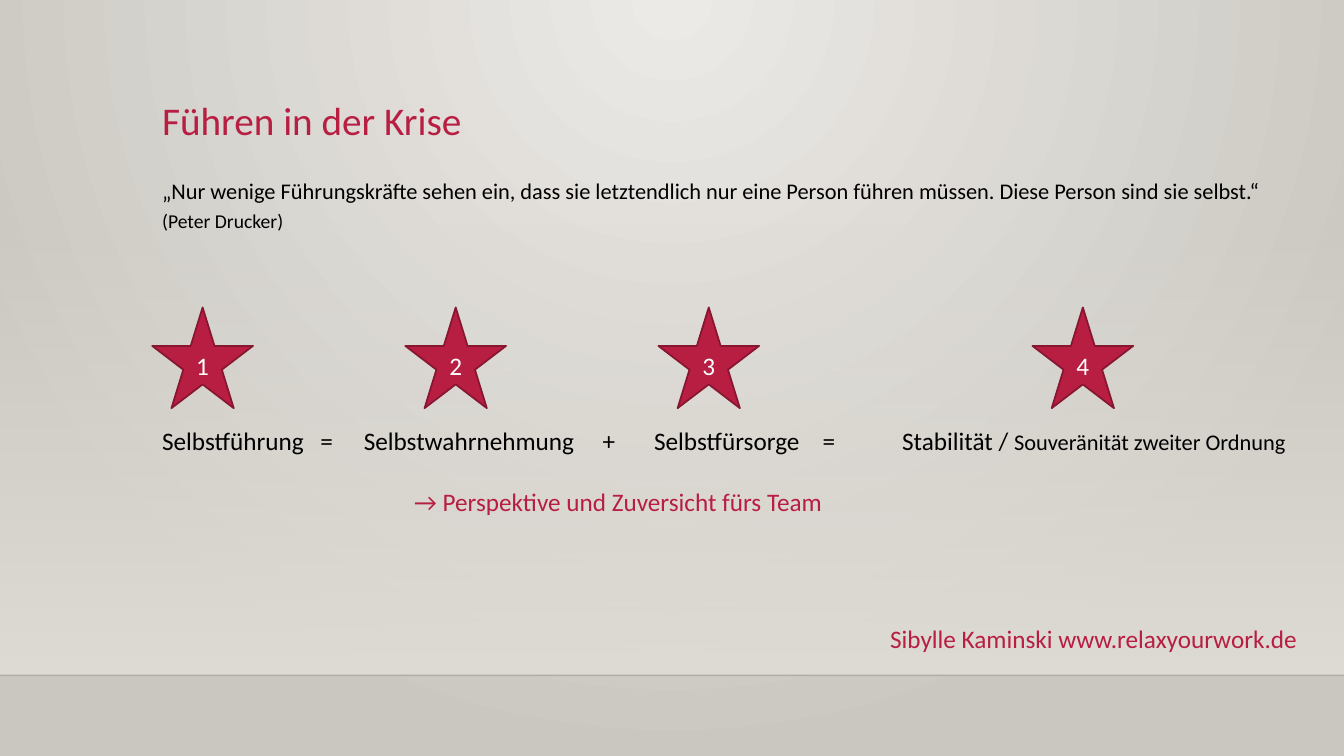
from lxml.etree import SubElement
from pptx import Presentation
from pptx.dml.color import RGBColor
from pptx.enum.shapes import MSO_CONNECTOR, MSO_SHAPE
from pptx.enum.text import MSO_ANCHOR, PP_ALIGN
from pptx.oxml.ns import qn
from pptx.util import Pt

PX = 9144
WIDTH, HEIGHT = 1333, 750
FLOOR = 670
FONT = "Calibri"
CRIMSON = RGBColor(0xB7, 0x1E, 0x42)
DARK_CRIMSON = RGBColor(0x87, 0x16, 0x31)
BLACK = RGBColor(0, 0, 0)
WHITE = RGBColor(0xFF, 0xFF, 0xFF)
LIGHT_STONE = RGBColor(0xEC, 0xEA, 0xE7)
DARK_STONE = RGBColor(0xCA, 0xC7, 0xC1)
WALL = RGBColor(0xDF, 0xDB, 0xD5)
FLOOR_LINE = RGBColor(0, 0, 1)


def scaled(*lengths):
    """Turn px lengths into EMU."""
    return [length * PX for length in lengths]


def set_stops(fill, *colours):
    """Make a fill a two-stop gradient."""
    fill.gradient()
    for stop, colour in zip(fill.gradient_stops, colours):
        stop.color.rgb = colour


def set_alpha(colour_element, percent):
    """Set the opacity of a colour element."""
    SubElement(colour_element, qn("a:alpha")).set("val", str(percent * 1000))


def paint_background(page):
    """Fill the background with light falling from the top centre."""
    set_stops(page.background.fill, LIGHT_STONE, DARK_STONE)
    gradient = page.element.xpath(".//p:bgPr/a:gradFill")[0]
    for linear in gradient.findall(qn("a:lin")):
        gradient.remove(linear)
    glow = SubElement(gradient, qn("a:path"))
    glow.set("path", "circle")
    focus = SubElement(glow, qn("a:fillToRect"))
    for side, value in (("l", 43), ("t", 0), ("r", 43), ("b", 100)):
        focus.set(side, str(value * 1000))


def add_wall(page):
    """Add the fading wall and the line where it meets the floor."""
    wall = page.shapes.add_shape(
        MSO_SHAPE.RECTANGLE, *scaled(0, 221, WIDTH, FLOOR - 221))
    wall.shadow.inherit = False
    wall.line.fill.background()
    set_stops(wall.fill, WALL, WALL)
    wall.fill.gradient_angle = 270
    set_alpha(wall.element.xpath(".//a:gs/a:srgbClr")[0], 0)

    edge = page.shapes.add_connector(
        MSO_CONNECTOR.STRAIGHT, *scaled(0, FLOOR, WIDTH, FLOOR))
    edge.line.color.rgb = FLOOR_LINE
    edge.line.width = Pt(1)
    set_alpha(edge.element.xpath(".//a:ln//a:srgbClr")[0], 20)
    SubElement(edge.element.spPr, qn("a:effectLst"))


def style(font, size, colour):
    """Set typeface, size and colour."""
    font.name = FONT
    font.size = Pt(size)
    font.color.rgb = colour


def add_star(page, left, number):
    """Add a numbered star."""
    star = page.shapes.add_shape(MSO_SHAPE.STAR_5_POINT, *scaled(left, 305, 100, 100))
    star.shadow.inherit = False
    star.fill.solid()
    star.fill.fore_color.rgb = CRIMSON
    star.line.color.rgb = DARK_CRIMSON
    star.line.width = Pt(1.25)
    star.text_frame.vertical_anchor = MSO_ANCHOR.MIDDLE
    para = star.text_frame.paragraphs[0]
    para.text = str(number)
    para.alignment = PP_ALIGN.CENTER
    style(para.font, 18, WHITE)


def add_box(page, left, top, width, height):
    """Add a wrapping text box and return its frame."""
    frame = page.shapes.add_textbox(*scaled(left, top, width, height)).text_frame
    frame.word_wrap = True
    return frame


def write(para, text, size, colour, before=None):
    """Write a paragraph in one style."""
    para.text = text
    if before is not None:
        para.space_before = Pt(before)
    style(para.font, size, colour)


def add_tabs(para, stops):
    """Give a paragraph left tab stops."""
    tabs = SubElement(para._p.get_or_add_pPr(), qn("a:tabLst"))
    for stop in stops:
        tab = SubElement(tabs, qn("a:tab"))
        tab.set("pos", str(stop * PX))
        tab.set("algn", "l")


def add_quote(page):
    """Add the title with the quotation under it."""
    frame = add_box(page, 151, 91, 1117, 151)
    write(frame.paragraphs[0], "Führen in der Krise", 28, CRIMSON)
    write(frame.add_paragraph(),
          "„Nur wenige Führungskräfte sehen ein, dass sie letztendlich nur eine "
          "Person führen müssen. Diese Person sind sie selbst.“", 16, BLACK, 24)
    write(frame.add_paragraph(), "(Peter Drucker)", 14, BLACK, 3)


def add_equation(page):
    """Add the equation and its outcome."""
    frame = add_box(page, 151, 417, 1143, 101)
    equation = frame.paragraphs[0]
    add_tabs(equation, (157, 200, 437, 488, 655, 734))
    terms = ("Selbstführung", "=", "Selbstwahrnehmung", "+",
             "Selbstfürsorge", "=", "Stabilität / ")
    for text, size in (("\t".join(terms), 18), ("Souveränität zweiter Ordnung", 16)):
        span = equation.add_run()
        span.text = text
        style(span.font, size, BLACK)

    outcome = frame.add_paragraph()
    outcome._p.get_or_add_pPr().set("marL", str(250 * PX))
    write(outcome, "→ Perspektive und Zuversicht fürs Team", 18, CRIMSON, 22)


def main():
    """Build the slide and save it."""
    deck = Presentation()
    deck.slide_width, deck.slide_height = scaled(WIDTH, HEIGHT)
    page = deck.slides.add_slide(deck.slide_layouts[6])
    paint_background(page)
    add_wall(page)
    add_quote(page)
    for number, left in enumerate((151, 402, 653, 1024), 1):
        add_star(page, left, number)
    add_equation(page)
    contact = add_box(page, 873, 613, 440, 40)
    write(contact.paragraphs[0], "Sibylle Kaminski www.relaxyourwork.de", 18, CRIMSON)
    deck.save("out.pptx")


if __name__ == "__main__":
    main()
